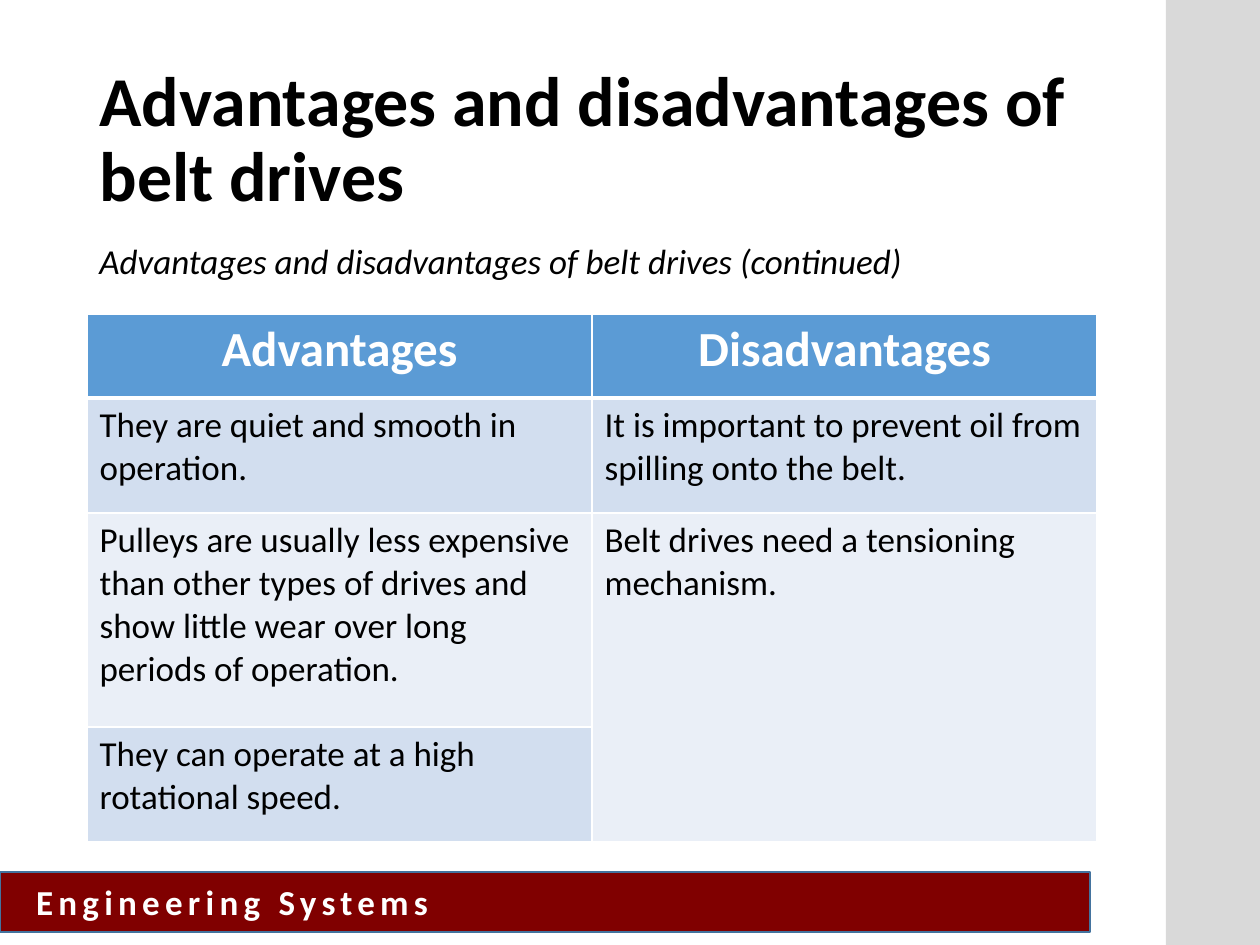
"""Build the slide on the advantages and disadvantages of belt drives."""
import pptx
import pptx.util
import pptx.dml.color
import pptx.enum.shapes
import pptx.enum.text
import pptx.oxml
import pptx.oxml.ns

ALIGN = pptx.enum.text.PP_ALIGN
MIDDLE = pptx.enum.text.MSO_ANCHOR.MIDDLE
LINE = (
    '<a:{tag} {ns} w="{width}"><a:solidFill><a:srgbClr val="{tint}"/>'
    "</a:solidFill></a:{tag}>"
)


def px(count):
    return pptx.util.Emu(round(count * 914400 / 126))


def color(tint):
    return pptx.dml.color.RGBColor.from_string(tint)


class Painter:
    def __init__(self, deck, font="Calibri"):
        self.font = font
        self.slide = deck.slides.add_slide(deck.slide_layouts[5])

    def add_run(self, frame, text, size, tint="000000", bold=False, italic=False,
                align=ALIGN.LEFT):
        para = frame.paragraphs[0]
        para.alignment = align
        run = para.add_run()
        run.text = text
        font = run.font
        font.name, font.size = self.font, pptx.util.Pt(size)
        font.bold, font.italic = bold, italic
        font.color.rgb = color(tint)
        return run

    def block(self, box, fill, edge=None):
        shape = self.slide.shapes.add_shape(
            pptx.enum.shapes.MSO_SHAPE.RECTANGLE, *map(px, box))
        shape.shadow.inherit = False
        shape.fill.solid()
        shape.fill.fore_color.rgb = color(fill)
        if edge:
            shape.line.color.rgb = color(edge)
            shape.line.width = pptx.util.Pt(1)
        else:
            shape.line.fill.background()
        return shape

    def banner(self, box, text):
        shape = self.block(box, "800000", "43739E")
        frame = shape.text_frame
        frame.vertical_anchor = MIDDLE
        frame.margin_left = px(36)
        run = self.add_run(frame, text, 20, "FFFFFF", bold=True)
        run.font._element.set("spc", "300")

    def title(self, box, text):
        shape = self.slide.shapes.title
        shape.left, shape.top, shape.width, shape.height = map(px, box)
        frame = shape.text_frame
        frame.word_wrap = True
        frame.auto_size = pptx.enum.text.MSO_AUTO_SIZE.NONE
        frame.vertical_anchor = MIDDLE
        self.add_run(frame, text, 40, bold=True)
        frame.paragraphs[0].line_spacing = 0.9

    def label(self, box, text):
        frame = self.slide.shapes.add_textbox(*map(px, box)).text_frame
        frame.word_wrap = True
        self.add_run(frame, text, 20, italic=True)

    def border(self, cell, top, bottom):
        props = cell._tc.get_or_add_tcPr()
        for tag, width in (("lnL", 1), ("lnR", 1), ("lnT", top), ("lnB", bottom)):
            props.append(pptx.oxml.parse_xml(LINE.format(
                tag=tag, ns=pptx.oxml.ns.nsdecls("a"),
                width=pptx.util.Pt(width), tint="FFFFFF")))

    def table(self, left, top, widths, heights, rows, fills):
        grid = self.slide.shapes.add_table(
            len(rows), len(widths), px(left), px(top),
            px(sum(widths)), px(sum(heights))).table
        for col, width in zip(grid.columns, widths):
            col.width = px(width)
        for r, (row, height, fill) in enumerate(zip(rows, heights, fills)):
            grid.rows[r].height = px(height)
            head = r == 0
            for c, text in enumerate(row):
                cell = grid.cell(r, c)
                self.border(cell, 3 if r == 1 else 1, 3 if head else 1)
                cell.fill.solid()
                cell.fill.fore_color.rgb = color(fill)
                if head:
                    self.add_run(cell.text_frame, text, 28, "FFFFFF", bold=True,
                                 align=ALIGN.CENTER)
                elif text:
                    self.add_run(cell.text_frame, text, 20)
        return grid


def main():
    deck = pptx.Presentation()
    deck.slide_width, deck.slide_height = px(1260), px(945)
    art = Painter(deck)
    art.banner((0, 872, 1090, 60), "Engineering Systems")
    art.block((1166, 0, 94, 945), "D9D9D9")
    art.title((87, 50, 1063, 183), "Advantages and disadvantages of belt drives")
    rows = [
        ("Advantages", "Disadvantages"),
        ("They are quiet and smooth in operation.",
         "It is important to prevent oil from spilling onto the belt."),
        ("Pulleys are usually less expensive than other types of drives and "
         "show little wear over long periods of operation.",
         "Belt drives need a tensioning mechanism."),
        ("They can operate at a high rotational speed.", ""),
    ]
    grid = art.table(87, 314, (505, 505), (84, 115, 214, 115), rows,
                     ("5B9BD5", "D2DEEF", "EAEFF7", "D2DEEF"))
    grid.cell(2, 1).merge(grid.cell(3, 1))
    art.label((87, 233, 987, 55),
              "Advantages and disadvantages of belt drives (continued)")
    deck.save("out.pptx")


if __name__ == "__main__":
    main()
